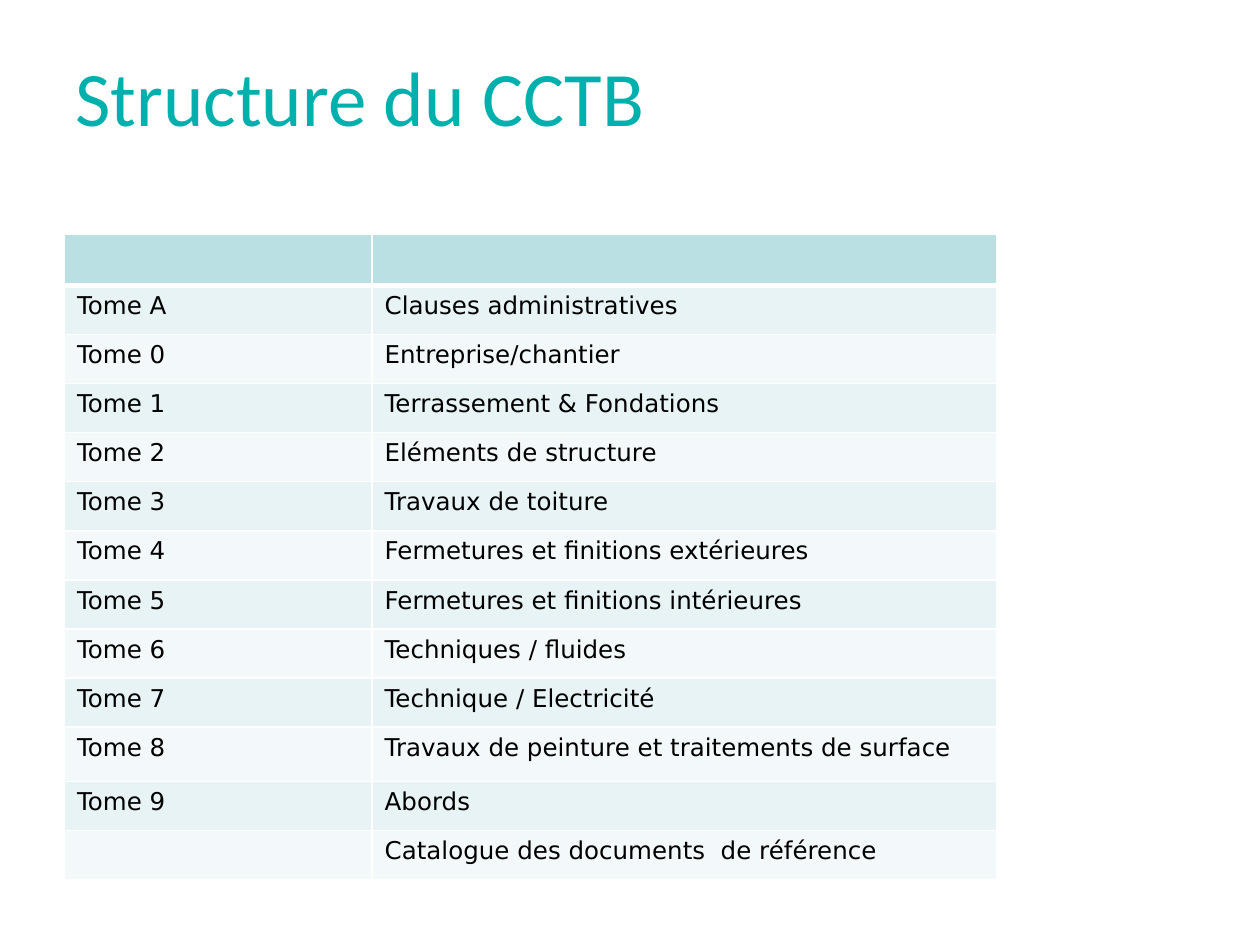
"""Build the slide listing the volumes of the CCTB."""
from lxml.etree import SubElement
from pptx import Presentation
from pptx.dml.color import RGBColor
from pptx.enum.text import MSO_ANCHOR as Anchor
from pptx.oxml.ns import qn
from pptx.util import Cm, Pt


def color(code):
    return RGBColor.from_string(code)


def write(frame, text, size=14, font="DejaVu Sans", ink="000000"):
    run = frame.paragraphs[0].add_run()
    run.text = text
    run.font.size = Pt(size)
    run.font.name = font
    run.font.bold = False
    run.font.color.rgb = color(ink)


ROWS = [
    ("", ""),
    ("Tome A", "Clauses administratives"),
    ("Tome 0", "Entreprise/chantier"),
    ("Tome 1", "Terrassement & Fondations"),
    ("Tome 2", "Eléments de structure"),
    ("Tome 3", "Travaux de toiture"),
    ("Tome 4", "Fermetures et finitions extérieures"),
    ("Tome 5", "Fermetures et finitions intérieures"),
    ("Tome 6", "Techniques / fluides"),
    ("Tome 7", "Technique / Electricité"),
    ("Tome 8", "Travaux de peinture et traitements de surface"),
    ("Tome 9", "Abords"),
    ("", "Catalogue des documents  de référence"),
]
WIDTHS = [6.2, 12.6]
HEIGHTS = [1.02] + [0.99] * 9 + [1.09] + [0.99] * 2
HEAD, BANDS = "BBE0E3", ["F3F9FA", "E7F3F4"]

deck = Presentation()
deck.slide_width, deck.slide_height = Cm(25.4), Cm(19.05)
slide = deck.slides.add_slide(deck.slide_layouts[6])

title = slide.shapes.add_textbox(Cm(1.27), Cm(0.33), Cm(19.6), Cm(3.18)).text_frame
title.word_wrap = True
title.vertical_anchor = Anchor.MIDDLE
write(title, "Structure du CCTB", size=44, font="Calibri", ink="00B0AC")

table = slide.shapes.add_table(
    len(ROWS), len(WIDTHS), Cm(1.3), Cm(4.73), Cm(sum(WIDTHS)), Cm(sum(HEIGHTS))
).table
for col, width in zip(table.columns, WIDTHS):
    col.width = Cm(width)

for i, texts in enumerate(ROWS):
    table.rows[i].height = Cm(HEIGHTS[i])
    for j, text in enumerate(texts):
        cell = table.cell(i, j)
        if text:
            write(cell.text_frame, text)
        else:
            cell.margin_top = cell.margin_bottom = 0
        props = cell._tc.get_or_add_tcPr()
        for side in "LRTB":
            thick = (i, side) in [(0, "B"), (1, "T")]
            line = SubElement(props, qn("a:ln" + side), w=str(Pt(3 if thick else 1)))
            fill = SubElement(line, qn("a:solidFill"))
            SubElement(fill, qn("a:srgbClr"), val="FFFFFF")
        cell.fill.solid()
        cell.fill.fore_color.rgb = color(BANDS[i % 2] if i else HEAD)

deck.save("out.pptx")
